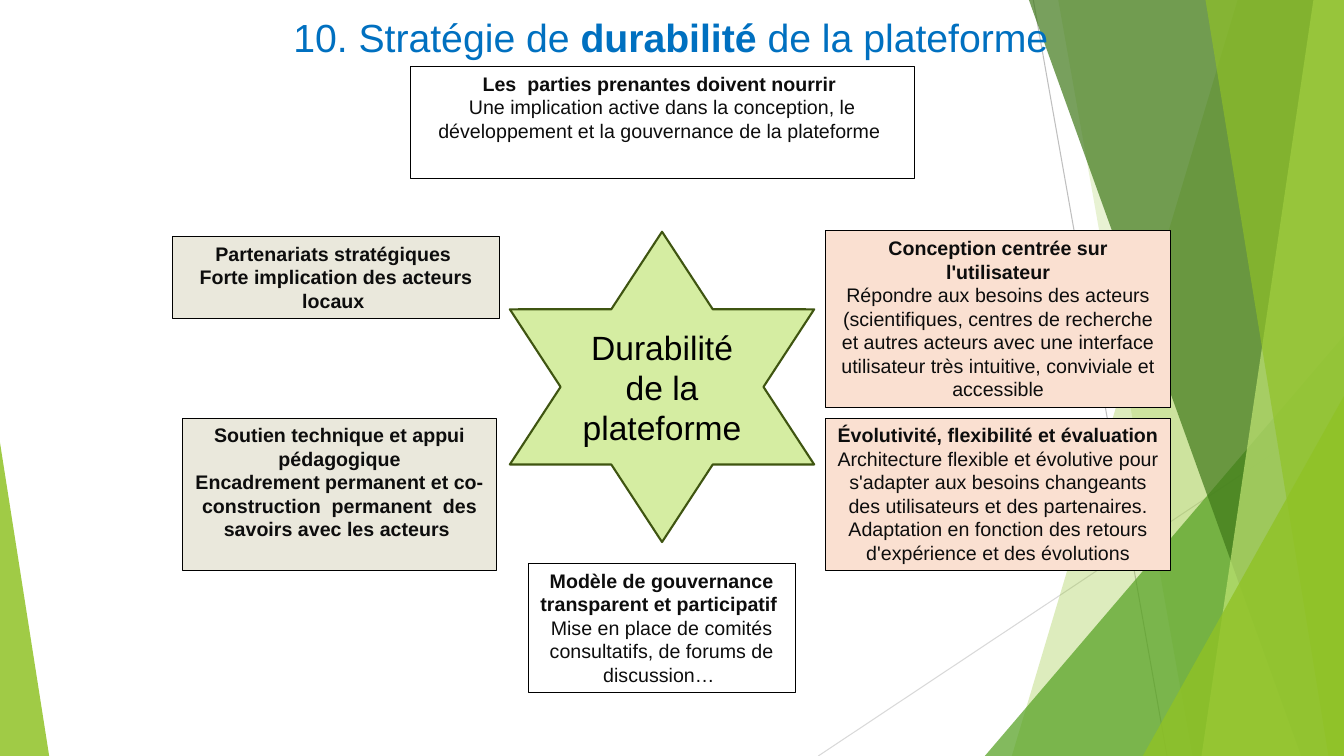
from lxml.etree import SubElement
from pptx import Presentation
from pptx.dml.color import RGBColor
from pptx.enum.shapes import MSO_CONNECTOR, MSO_SHAPE as SHAPE
from pptx.enum.text import MSO_ANCHOR as ANCHOR, PP_ALIGN as ALIGN
from pptx.oxml.ns import qn
from pptx.util import Cm, Pt

W, H = 33.87, 19.05
FONT = "Arial"
COLORS = {
    "green": "90C226", "mid": "54A021", "dark": "3F7819", "light": "C0E474",
    "line1": "BFBFBF", "line2": "D9D9D9", "title": "0070C0", "text": "0D0D0D",
    "black": "000000", "star": "D5EDA2", "star_line": "3F5511",
    "peach": "FAE0D1", "beige": "EAE8DC",
}


def rgb(name):
    return RGBColor.from_string(COLORS[name])


def style(sp, fill=None, line=None, width=0.75, alpha=None):
    sp.shadow.inherit = False
    if fill:
        sp.fill.solid()
        sp.fill.fore_color.rgb = rgb(fill)
    else:
        sp.fill.background()
    if alpha:
        color = sp.fill._xPr.find(qn("a:solidFill"))[0]
        SubElement(color, qn("a:alpha"), val=str(alpha * 1000))
    if line:
        sp.line.color.rgb = rgb(line)
        sp.line.width = Pt(width)
    else:
        sp.line.fill.background()


def add_line(s, x1, y1, x2, y2, color):
    cn = s.shapes.add_connector(MSO_CONNECTOR.STRAIGHT, Cm(x1), Cm(y1), Cm(x2), Cm(y2))
    cn.line.color.rgb = rgb(color)
    cn.line.width = Pt(0.75)
    SubElement(cn._element.spPr, qn("a:effectLst"))


def add_band(s, top_x, bottom_x, color, alpha):
    """Band from a slanted left edge to the right edge of the slide."""
    fb = s.shapes.build_freeform(Cm(top_x), 0)
    corners = [(W, 0), (W, H), (bottom_x, H)]
    fb.add_line_segments([(Cm(x), Cm(y)) for x, y in corners])
    style(fb.convert_to_shape(), color, alpha=alpha)


def add_triangle(s, left, top, width, apex, color, alpha):
    """Triangle standing on the bottom edge of the slide."""
    sp = s.shapes.add_shape(SHAPE.ISOSCELES_TRIANGLE, Cm(left), Cm(top), Cm(width), Cm(H - top))
    sp.adjustments[0] = apex
    style(sp, color, alpha=alpha)


def add_runs(p, runs, size, color):
    p.alignment = ALIGN.CENTER
    for text, bold in runs:
        r = p.add_run()
        r.text = text
        r.font.name = FONT
        r.font.size = Pt(size)
        r.font.bold = bold
        r.font.color.rgb = rgb(color)


def add_title(s, runs):
    tf = s.shapes.add_textbox(Cm(4.6), Cm(0.13), Cm(24.61), Cm(1.55)).text_frame
    tf.word_wrap = True
    p = tf.paragraphs[0]
    p.line_spacing = 1.07
    p.space_after = Pt(24)
    add_runs(p, runs, 28, "title")


def add_star(s, text):
    sp = s.shapes.add_shape(SHAPE.STAR_6_POINT, Cm(12.85), Cm(5.84), Cm(7.67), Cm(7.82))
    style(sp, "star", "star_line", 1.5)
    tf = sp.text_frame
    tf.word_wrap = True
    tf.vertical_anchor = ANCHOR.MIDDLE
    add_runs(tf.paragraphs[0], [(text, False)], 24, "black")


def add_box(s, left, top, width, height, fill, heading, body, bold_body=False):
    sp = s.shapes.add_shape(SHAPE.RECTANGLE, Cm(left), Cm(top), Cm(width), Cm(height))
    style(sp, fill, "black")
    tf = sp.text_frame
    tf.word_wrap = True
    tf.vertical_anchor = ANCHOR.TOP
    add_runs(tf.paragraphs[0], [(heading, True)], 14, "text")
    add_runs(tf.add_paragraph(), [(body, bold_body)], 14, "text")


def add_background(s):
    add_line(s, 26.04, 0, 29.41, H, "line1")
    add_line(s, W, 10.24, 20.62, H, "line2")
    add_band(s, 31.19, 25.5, "green", 30)
    add_band(s, 26.67, 30.05, "green", 20)
    add_triangle(s, 24.82, 8.46, W - 24.82, 1, "mid", 72)
    add_band(s, 25.93, 32.79, "dark", 70)
    add_band(s, 33.1, 30.28, "light", 70)
    add_band(s, 30.38, 33.48, "green", 65)
    add_triangle(s, 28.8, 9.98, W - 28.8, 1, "green", 80)
    add_triangle(s, 0, 11.15, 1.24, 0, "green", 85)


def main():
    prs = Presentation()
    prs.slide_width, prs.slide_height = Cm(W), Cm(H)
    s = prs.slides.add_slide(prs.slide_layouts[6])

    # Green facets
    add_background(s)

    # Title and central star
    add_title(s, [("10. Stratégie de ", False), ("durabilité", True),
                  (" de la plateforme", False)])
    add_star(s, "Durabilité de la plateforme")

    # Boxes above and below the star
    add_box(s, 10.34, 1.68, 12.7, 2.82, None, "Les  parties prenantes doivent nourrir ",
            "Une implication active dans la conception, le développement "
            "et la gouvernance de la plateforme ")
    add_box(s, 13.31, 14.2, 6.73, 3.25, None,
            "Modèle de gouvernance transparent et participatif ",
            "Mise en place de comités consultatifs, de forums de discussion… ")

    # Boxes on the left
    add_box(s, 4.34, 5.97, 8.26, 2.06, "beige", "Partenariats stratégiques ",
            "Forte implication des acteurs locaux ", True)
    add_box(s, 4.6, 10.54, 7.92, 3.84, "beige", "Soutien technique et appui pédagogique",
            "Encadrement permanent et co-construction  permanent  des "
            "savoirs avec les acteurs ", True)

    # Boxes on the right
    add_box(s, 20.8, 5.82, 8.71, 4.45, "peach", "Conception centrée sur l'utilisateur",
            "Répondre aux besoins des acteurs (scientifiques, centres de recherche et "
            "autres acteurs avec une interface utilisateur très intuitive, conviviale "
            "et accessible")
    add_box(s, 20.8, 10.54, 8.71, 3.84, "peach", "Évolutivité, flexibilité et évaluation",
            "Architecture flexible et évolutive pour s'adapter aux besoins changeants "
            "des utilisateurs et des partenaires. Adaptation en fonction des retours "
            "d'expérience et des évolutions")

    prs.save("out.pptx")


if __name__ == "__main__":
    main()
